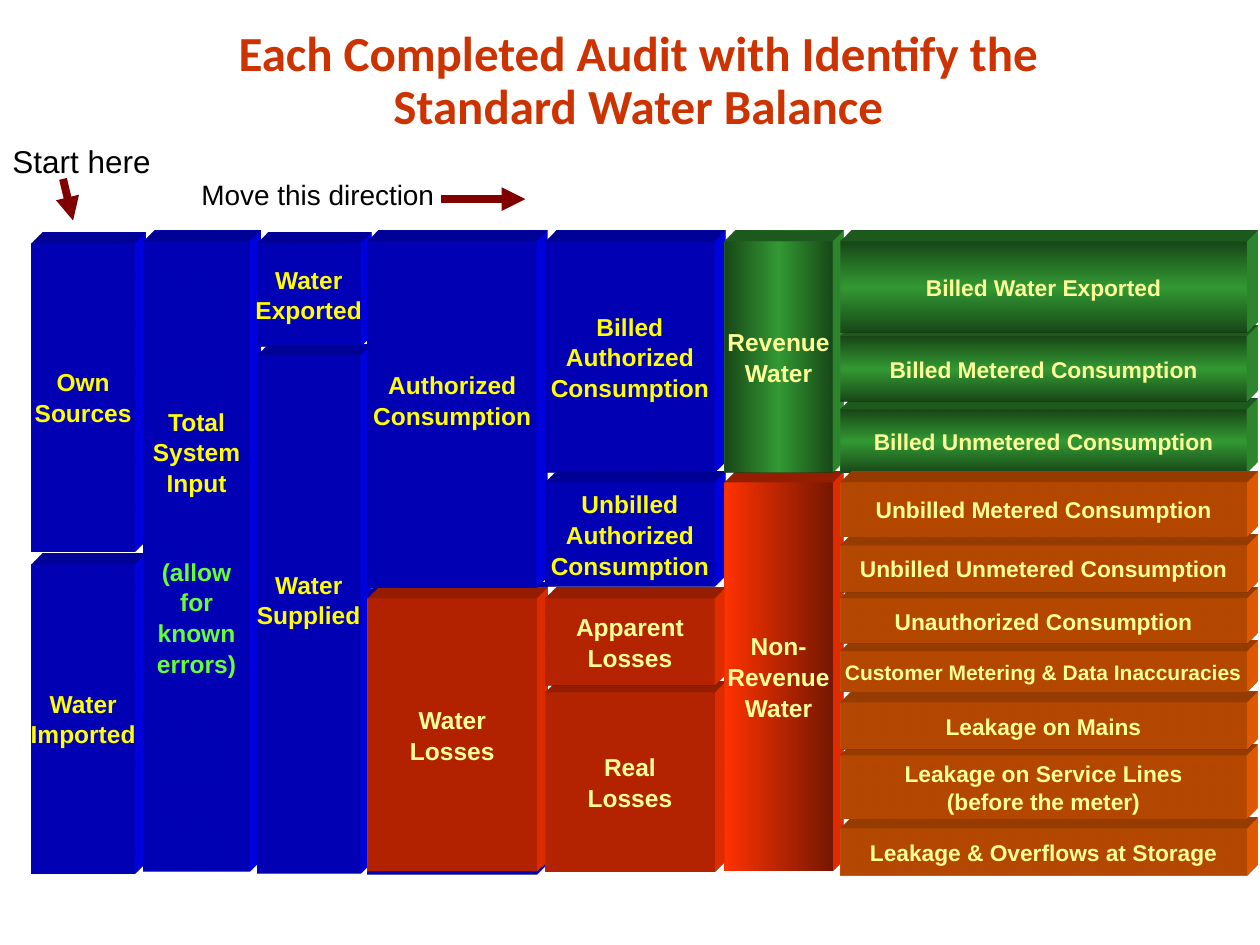
"""Builds the standard water balance slide as columns of extruded blocks."""
from dataclasses import dataclass

from lxml.etree import SubElement
from pptx import Presentation
from pptx.dml.color import RGBColor
from pptx.enum.shapes import MSO_CONNECTOR, MSO_SHAPE
from pptx.enum.text import MSO_ANCHOR, MSO_AUTO_SIZE, PP_ALIGN
from pptx.oxml import parse_xml
from pptx.oxml.ns import nsdecls, qn
from pptx.util import Inches, Pt


@dataclass(frozen=True)
class Theme:
    title: str = "CC3300"
    label: str = "000000"
    arrow: str = "800000"
    blue: str = "0000FF"
    red: str = "FF3300"
    orange: str = "FF6600"
    green: str = "339933"
    dark_green: str = "184718"
    dark_red: str = "761800"
    yellow: str = "FFFF00"
    cream: str = "FFFF99"
    lime: str = "66FF33"
    title_font: str = "Calibri"
    body_font: str = "Arial"
    title_size: int = 28
    start_size: int = 18
    direction_size: int = 16
    block_size: int = 14
    detail_size: int = 13
    small_size: int = 12


theme = Theme()


def style(paragraph, size, color, face=theme.body_font, bold=True):
    font = paragraph.font
    font.name, font.size, font.bold = face, Pt(size), bold
    font.color.rgb = RGBColor.from_string(color)


def add_block(column, top, height, lines, fill, ink, size=theme.block_size,
              gradient=None, angle=0, lift=0):
    left, width = column
    block = slide.shapes.add_shape(
        MSO_SHAPE.RECTANGLE, Inches(left), Inches(top), Inches(width), Inches(height))
    properties = block._element.spPr
    if gradient:
        last = len(gradient) - 1
        stops = "".join(
            f'<a:gs pos="{100000 * i // last}"><a:srgbClr val="{color}"/></a:gs>'
            for i, color in enumerate(gradient))
        properties.append(parse_xml(
            f'<a:gradFill {nsdecls("a")} rotWithShape="1"><a:gsLst>{stops}</a:gsLst>'
            f'<a:lin ang="{angle * 60000}" scaled="1"/></a:gradFill>'))
    else:
        block.fill.solid()
        block.fill.fore_color.rgb = RGBColor.from_string(fill)
    block.line.fill.background()
    block.shadow.inherit = False
    properties.append(parse_xml(
        f'<a:scene3d {nsdecls("a")}><a:camera prst="legacyObliqueTopRight"/>'
        '<a:lightRig rig="legacyFlat3" dir="b"/></a:scene3d>'))
    properties.append(parse_xml(
        f'<a:sp3d {nsdecls("a")} extrusionH="227000" prstMaterial="legacyMatrix">'
        f'<a:extrusionClr><a:srgbClr val="{fill}"/></a:extrusionClr></a:sp3d>'))
    frame = block.text_frame
    frame.word_wrap = False
    frame.vertical_anchor = MSO_ANCHOR.MIDDLE
    frame.margin_bottom = Inches(0.05 + lift)
    for i, line in enumerate(lines):
        paragraph = frame.paragraphs[0] if i == 0 else frame.add_paragraph()
        paragraph.text = line
        paragraph.alignment = PP_ALIGN.CENTER
        if i:
            paragraph.space_before = Pt(0.7)
        style(paragraph, size, ink)
    return block


presentation = Presentation()
presentation.slide_width, presentation.slide_height = Inches(10), Inches(7.5)
slide = presentation.slides.add_slide(presentation.slide_layouts[5])

title = slide.shapes.title
title.left, title.top, title.width, title.height = map(Inches, (1.23, 0.11, 7.67, 1.08))
title.text_frame.text = "Each Completed Audit with Identify the Standard Water Balance"
title.text_frame.word_wrap = True
title.text_frame.vertical_anchor = MSO_ANCHOR.MIDDLE
heading = title.text_frame.paragraphs[0]
heading.alignment = PP_ALIGN.CENTER
heading.line_spacing = 0.9
style(heading, theme.title_size, theme.title, theme.title_font)

sources, total, supply = (0.25, 0.82), (1.14, 0.84), (2.04, 0.82)
use, split, revenue, detail = (2.92, 1.34), (4.33, 1.34), (5.75, 0.86), (6.67, 3.22)
blank_line = 0.23
blue_yellow = (theme.blue, theme.yellow)
red_cream = (theme.red, theme.cream)
green_cream = (theme.green, theme.cream)
green_band = (theme.dark_green, theme.green, theme.dark_green)

add_block(sources, 4.48, 2.45, ["Water", "Imported"], *blue_yellow)
add_block(sources, 1.93, 2.45, ["Own", "Sources"], *blue_yellow)

system_input = add_block(
    total, 1.92, 5, ["Total", "System", "Input", "(allow", "for", "known", "errors)"],
    *blue_yellow, lift=blank_line)
allowance = system_input.text_frame.paragraphs[3:]
allowance[0].space_before = Pt(34)
for paragraph in allowance:
    style(paragraph, theme.block_size, theme.lime)

add_block(supply, 2.82, 4.11, ["Water", "Supplied"], *blue_yellow, lift=blank_line)
add_block(supply, 1.93, 0.82, ["Water", "Exported"], *blue_yellow)
add_block(use, 4.71, 2.23, [], *blue_yellow)
add_block(use, 4.75, 2.17, ["Water", "Losses"], *red_cream)
add_block(use, 1.92, 2.74, ["Authorized", "Consumption"], *blue_yellow, lift=blank_line)
add_block(split, 5.5, 1.42, ["Real", "Losses"], *red_cream)
add_block(split, 4.75, 0.69, ["Apparent", "Losses"], *red_cream)
add_block(split, 3.83, 0.83, ["Unbilled", "Authorized", "Consumption"], *blue_yellow)
add_block(split, 1.92, 1.83, ["Billed", "Authorized", "Consumption"], *blue_yellow)
add_block(revenue, 3.83, 3.08, ["Non-", "Revenue", "Water"], *red_cream,
          gradient=(theme.red, theme.dark_red))
add_block(revenue, 1.92, 1.83, ["Revenue", "Water"], *green_cream, gradient=green_band)

add_block(detail, 6.58, 0.37, ["Leakage & Overflows at Storage"],
          theme.orange, theme.cream, theme.detail_size)
for top, height, name in (
    (3.25, 0.5, "Billed Unmetered Consumption"),
    (2.67, 0.52, "Billed Metered Consumption"),
    (1.92, 0.72, "Billed Water Exported"),
):
    add_block(detail, top, height, [name], *green_cream, theme.detail_size,
              gradient=green_band, angle=90)
for top, height, lines, size in (
    (6, 0.5, ["Leakage on Service Lines", "(before the meter)"], theme.detail_size),
    (5.58, 0.37, ["Leakage on Mains"], theme.detail_size),
    (5.17, 0.32, ["Customer Metering & Data Inaccuracies"], theme.small_size),
    (4.75, 0.36, ["Unauthorized Consumption"], theme.detail_size),
    (4.33, 0.37, ["Unbilled Unmetered Consumption"], theme.detail_size),
    (3.83, 0.43, ["Unbilled Metered Consumption"], theme.detail_size),
):
    add_block(detail, top, height, lines, theme.orange, theme.cream, size)

for hint, size, place, route in (
    ("Start here", theme.start_size, (0, 1.08, 1.3, 0.4), (0.5, 1.42, 0.58, 1.75)),
    ("Move this direction", theme.direction_size, (1.5, 1.36, 2.05, 0.37),
     (3.5, 1.58, 4.17, 1.58)),
):
    label = slide.shapes.add_textbox(*map(Inches, place)).text_frame
    label.word_wrap = False
    label.auto_size = MSO_AUTO_SIZE.SHAPE_TO_FIT_TEXT
    label.text = hint
    style(label.paragraphs[0], size, theme.label, bold=False)

    arrow = slide.shapes.add_connector(MSO_CONNECTOR.STRAIGHT, *map(Inches, route))
    arrow.line.width = Pt(4.5)
    arrow.line.color.rgb = RGBColor.from_string(theme.arrow)
    SubElement(arrow.line._get_or_add_ln(), qn("a:tailEnd"), type="triangle")
    SubElement(arrow._element.spPr, qn("a:effectLst"))

presentation.save("out.pptx")
